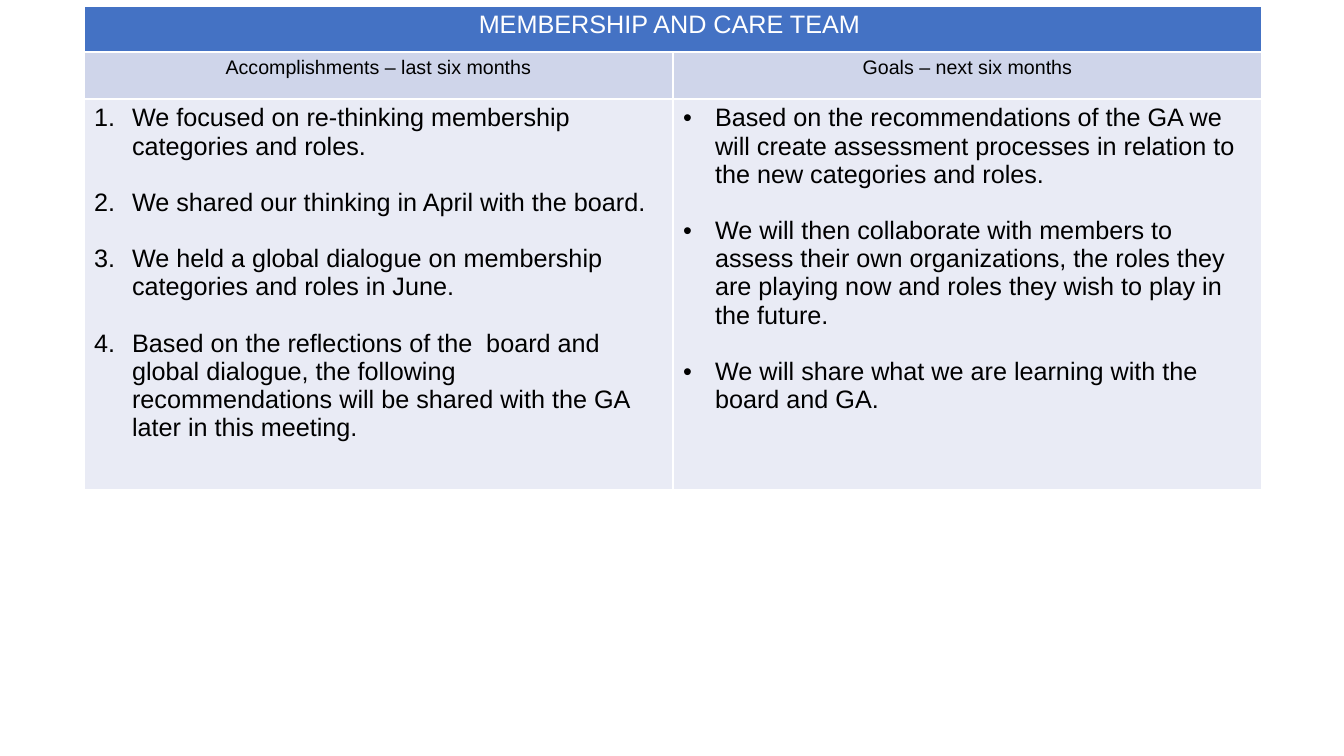
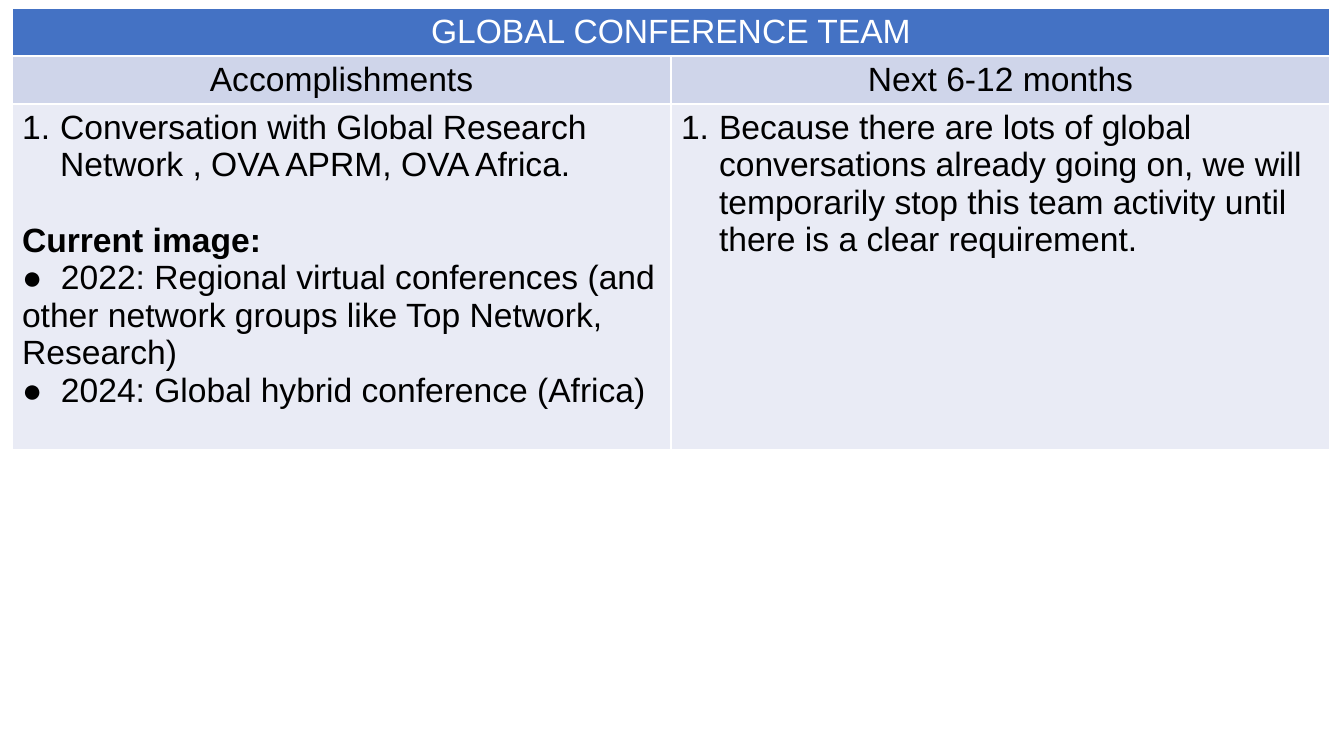
from lxml import etree
from pptx import Presentation
from pptx import util as u
from pptx.dml.color import RGBColor
from pptx.enum import text
from pptx.oxml import ns

FONT = "Arial"
BAND, HEADING_FILL, BODY_FILL = "4472C4", "CFD5EA", "E9EBF5"
WHITE, BLACK = "FFFFFF", "000000"
SLIDE_SIZE = (1344, 756)
NUMBER, DOT, PLAIN, STRONG = "number", "dot", "plain", "strong"
HANG = {NUMBER: 38, DOT: 32}

TEAMS = [
    dict(
        title="MEMBERSHIP AND CARE TEAM ",
        headings=["Accomplishments – last six months", "Goals – next six months"],
        columns=[
            [
                (NUMBER, "We focused on re-thinking membership categories and roles."),
                (NUMBER, "We shared our thinking in April with the board."),
                (NUMBER, "We held a global dialogue on membership categories and roles in June."),
                (NUMBER, "Based on the reflections of the  board and global dialogue, the following "
                         "recommendations will be shared with the GA later in this meeting."),
            ],
            [
                (DOT, "Based on the recommendations of the GA we will create assessment processes "
                      "in relation to the new categories and roles."),
                (DOT, "We will then collaborate with members to assess their own organizations, "
                      "the roles they are playing now and roles they wish to play in the future."),
                (DOT, "We will share what we are learning with the board and GA."),
            ],
        ],
        left=84, top=6, column_width=589, rows=(46, 47, 391),
        sizes=(18, 14, 18), gap=20,
    ),
    dict(
        title="GLOBAL CONFERENCE TEAM",
        headings=["Accomplishments", "Next 6-12 months"],
        columns=[
            [
                (NUMBER, "Conversation with Global Research Network , OVA APRM, OVA Africa."),
                (STRONG, "Current image:"),
                (PLAIN, "●  2022: Regional virtual conferences (and other network groups like "
                        "Top Network, Research)"),
                (PLAIN, "●  2024: Global hybrid conference (Africa)"),
            ],
            [
                (NUMBER, "Because there are lots of global conversations already going on, we will "
                         "temporarily stop this team activity until there is a clear requirement."),
            ],
        ],
        left=12, top=8, column_width=659, rows=(48, 48, 346),
        sizes=(24, 24, 24), gap=27,
    ),
]


def px(length):
    return u.Emu(round(length * 914400 / 100.8))


def rgb(value):
    return RGBColor.from_string(value)


def add_marker(paragraph, kind):
    properties = paragraph._p.get_or_add_pPr()
    properties.set("marL", str(px(HANG[kind])))
    properties.set("indent", str(-px(HANG[kind])))
    etree.SubElement(properties, ns.qn("a:buFont"), typeface=FONT)
    if kind == NUMBER:
        etree.SubElement(properties, ns.qn("a:buAutoNum"), type="arabicPeriod")
    else:
        etree.SubElement(properties, ns.qn("a:buChar"), char="•")


def fill_cell(cell, fill, items, size, color=BLACK, align=text.PP_ALIGN.LEFT, gap=0):
    cell.fill.solid()
    cell.fill.fore_color.rgb = rgb(fill)
    for index, (kind, wording) in enumerate(items):
        paragraph = cell.text_frame.paragraphs[0] if index == 0 else cell.text_frame.add_paragraph()
        paragraph.text = wording
        paragraph.alignment = align
        if kind in HANG:
            add_marker(paragraph, kind)
        if index and kind != PLAIN:
            paragraph.space_before = u.Pt(gap)
        font = paragraph.font
        font.name, font.size, font.bold = FONT, u.Pt(size), kind == STRONG
        font.color.rgb = rgb(color)


def add_team(deck, team):
    slide = deck.slides.add_slide(deck.slide_layouts[6])
    count = len(team["columns"])
    table = slide.shapes.add_table(
        len(team["rows"]), count, px(team["left"]), px(team["top"]),
        px(count * team["column_width"]), px(sum(team["rows"]))).table
    for row, height in zip(table.rows, team["rows"]):
        row.height = px(height)
    for column in table.columns:
        column.width = px(team["column_width"])

    title_size, heading_size, body_size = team["sizes"]
    center = text.PP_ALIGN.CENTER
    table.cell(0, 0).merge(table.cell(0, count - 1))
    fill_cell(table.cell(0, 0), BAND, [(PLAIN, team["title"])], title_size, WHITE, center)
    for index, (heading, items) in enumerate(zip(team["headings"], team["columns"])):
        fill_cell(table.cell(1, index), HEADING_FILL, [(PLAIN, heading)], heading_size, align=center)
        fill_cell(table.cell(2, index), BODY_FILL, items, body_size, gap=team["gap"])


def main():
    deck = Presentation()
    deck.slide_width, deck.slide_height = map(px, SLIDE_SIZE)
    for team in TEAMS:
        add_team(deck, team)
    deck.save("out.pptx")


if __name__ == "__main__":
    main()
